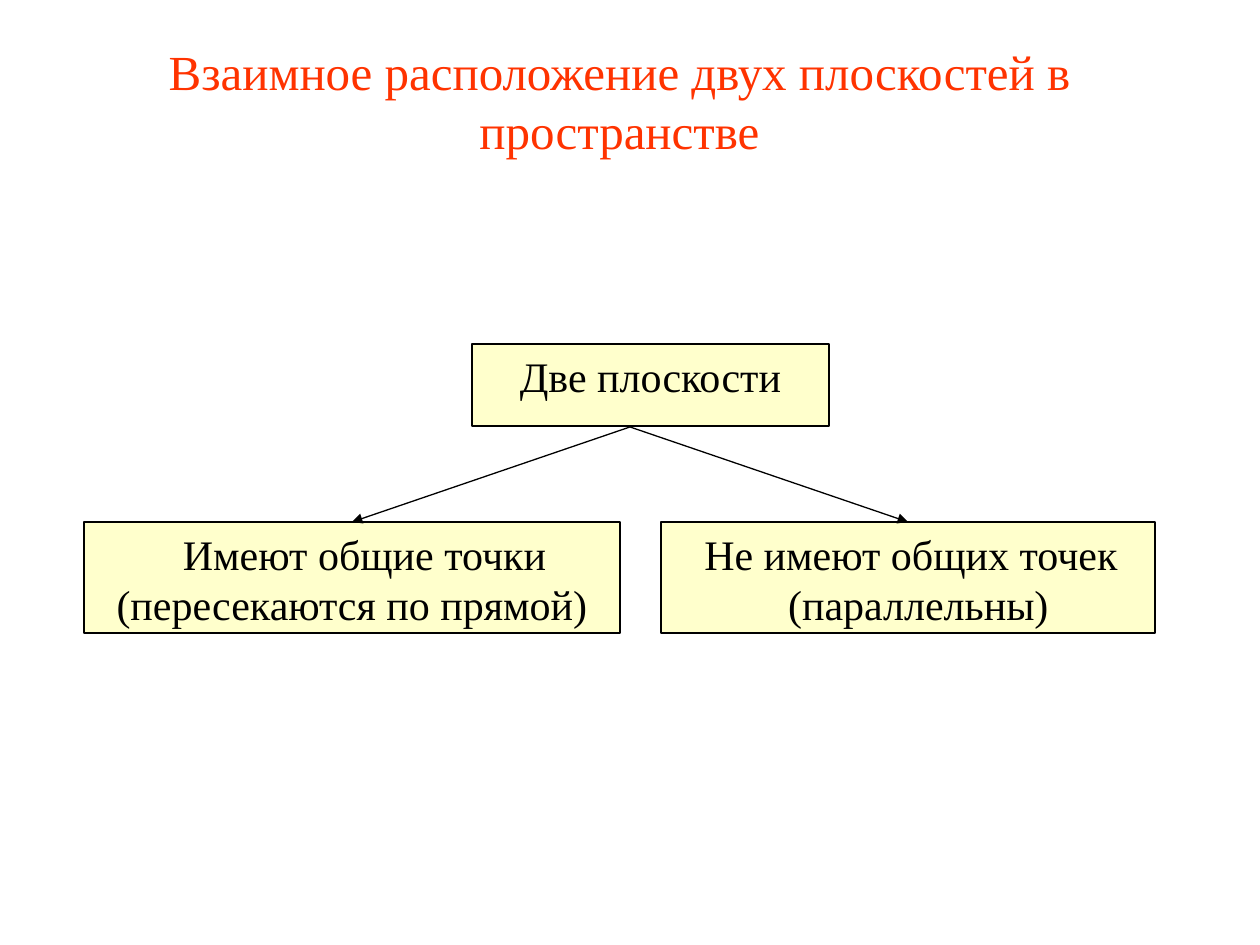
import dataclasses

import lxml.etree
import pptx
import pptx.dml.color
import pptx.enum.shapes
import pptx.enum.text
import pptx.oxml.ns
import pptx.util

EMU_PER_PX = 914400 / 126


@dataclasses.dataclass(frozen=True)
class Theme:
    font: str = "Times New Roman"
    title_size: int = 28
    box_size: int = 24
    line_width: float = 0.75
    title: str = "FF3300"
    ink: str = "000000"
    box_fill: str = "FFFFCC"


THEME = Theme()


def px(length):
    return pptx.util.Emu(round(length * EMU_PER_PX))


def rgb(color):
    return pptx.dml.color.RGBColor.from_string(color)


def write_line(paragraph, text, size, color, indent=0):
    """Centre one line of text; indent shifts it to the right by half its px."""
    paragraph.text = text
    paragraph.alignment = pptx.enum.text.PP_ALIGN.CENTER
    paragraph.font.name = THEME.font
    paragraph.font.size = pptx.util.Pt(size)
    paragraph.font.color.rgb = rgb(color)
    if indent:
        properties = paragraph._p.get_or_add_pPr()
        properties.set("marL", str(px(indent)))
        properties.set("indent", "0")


def add_title(slide, box, text):
    frame = slide.shapes.add_textbox(*map(px, box)).text_frame
    frame.word_wrap = True
    frame.vertical_anchor = pptx.enum.text.MSO_ANCHOR.MIDDLE
    write_line(frame.paragraphs[0], text, THEME.title_size, THEME.title)


def add_node(slide, box, lines):
    """Draw a bordered box holding (text, indent) lines."""
    node = slide.shapes.add_shape(
        pptx.enum.shapes.MSO_SHAPE.RECTANGLE, *map(px, box))
    node.shadow.inherit = False
    node.fill.solid()
    node.fill.fore_color.rgb = rgb(THEME.box_fill)
    node.line.color.rgb = rgb(THEME.ink)
    node.line.width = pptx.util.Pt(THEME.line_width)
    frame = node.text_frame
    frame.word_wrap = True
    frame.vertical_anchor = pptx.enum.text.MSO_ANCHOR.TOP
    for number, (text, indent) in enumerate(lines):
        paragraph = frame.add_paragraph() if number else frame.paragraphs[0]
        write_line(paragraph, text, THEME.box_size, THEME.ink, indent)
    return node


def add_arrow(slide, start, target):
    """Draw an arrow from a point to the top middle of the target box."""
    x, y = map(px, start)
    arrow = slide.shapes.add_connector(
        pptx.enum.shapes.MSO_CONNECTOR.STRAIGHT, x, y, x, y)
    arrow.end_connect(target, 0)
    arrow.line.color.rgb = rgb(THEME.ink)
    arrow.line.width = pptx.util.Pt(THEME.line_width)
    qn = pptx.oxml.ns.qn
    lxml.etree.SubElement(arrow.line._get_or_add_ln(), qn("a:tailEnd"),
                          type="triangle")
    lxml.etree.SubElement(arrow._element.spPr, qn("a:effectLst"))


def add_tree(slide, box):
    """Draw the root box and its two cases inside the given box."""
    left, top, width, height = box
    root_height, case_height = 82, 111
    case_top = top + height - case_height
    left_width, right_width = 536, 494

    add_node(slide, (left + 388, top, 357, root_height),
             [("Две плоскости", 0)])
    cases = [
        add_node(slide, (left, case_top, left_width, case_height),
                 [("Имеют общие точки", 25),
                  ("(пересекаются по прямой)", 0)]),
        add_node(slide, (left + width - right_width, case_top,
                         right_width, case_height),
                 [("Не имеют общих точек", 6),
                  ("(параллельны)", 21)]),
    ]
    fork = (left + 546, top + root_height + 1)
    for case in cases:
        add_arrow(slide, fork, case)


def main():
    presentation = pptx.Presentation()
    presentation.slide_width = px(1260)
    presentation.slide_height = px(945)
    slide = presentation.slides.add_slide(presentation.slide_layouts[6])
    add_tree(slide, (84, 344, 1071, 289))
    add_title(slide, (84, 21, 1071, 158),
              "Взаимное расположение двух плоскостей в пространстве")
    presentation.save("out.pptx")


if __name__ == "__main__":
    main()
